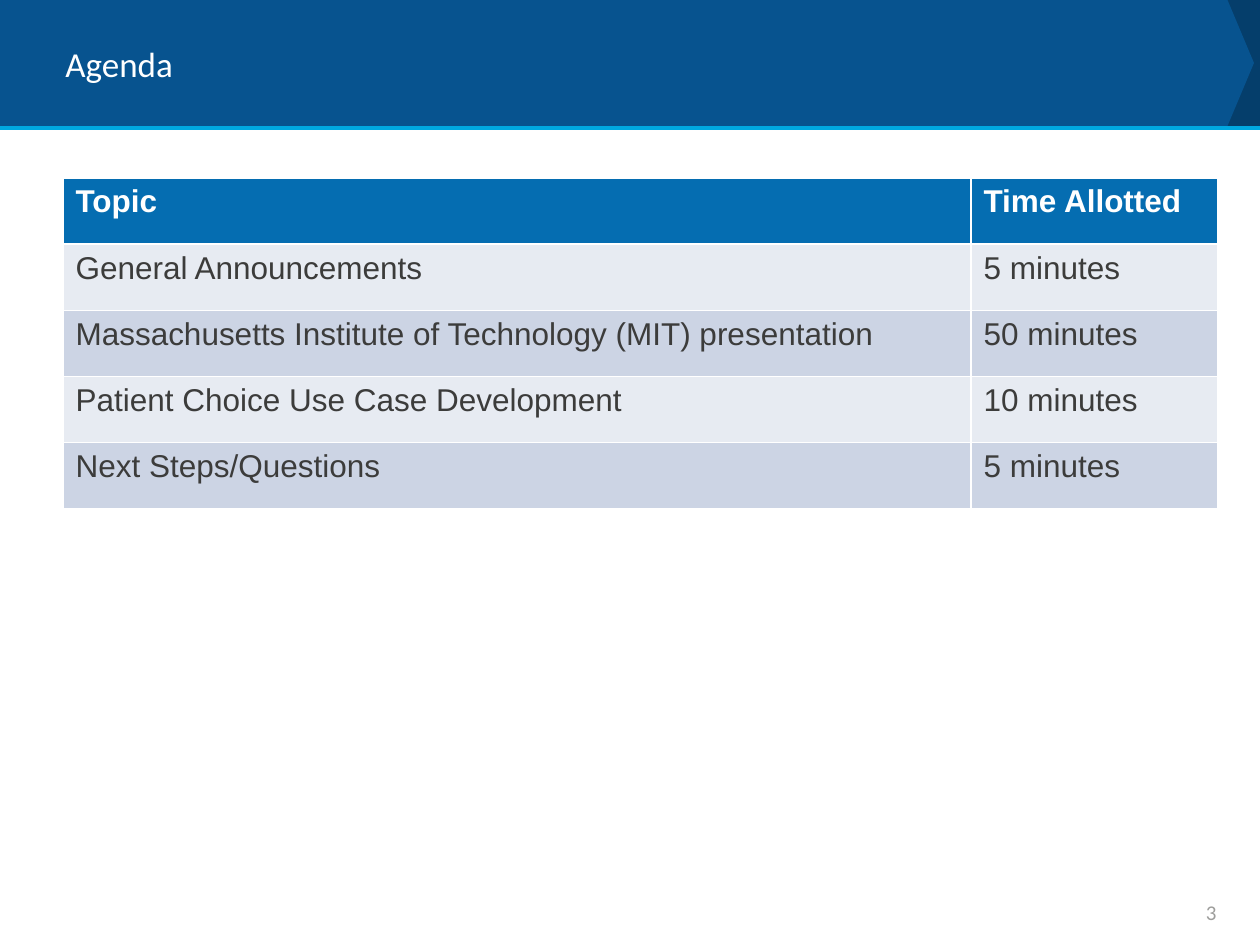
from dataclasses import dataclass

from lxml import etree
from pptx import Presentation
from pptx.dml.color import RGBColor
from pptx.enum.shapes import MSO_CONNECTOR, MSO_SHAPE
from pptx.enum.text import MSO_ANCHOR, PP_ALIGN
from pptx.oxml.ns import qn
from pptx.util import Pt

PLATE = MSO_SHAPE.PENTAGON
LINE = MSO_CONNECTOR.STRAIGHT
MIDDLE = MSO_ANCHOR.MIDDLE
LEFT, RIGHT = PP_ALIGN.LEFT, PP_ALIGN.RIGHT
SCALE = 914400 / 126


@dataclass(frozen=True)
class Theme:
    """Colours, fonts and type sizes of the slide."""
    navy: str = "053E6B"
    blue: str = "07538F"
    sky: str = "00A8E1"
    head: str = "056DB1"
    bands: tuple = ("E7EBF2", "CCD4E4")
    white: str = "FFFFFF"
    ink: str = "3C3C3B"
    gray: str = "9E9E9C"
    sans: str = "Calibri"
    body: str = "Arial"
    title: int = 20
    cell: int = 18
    page: int = 12


THEME = Theme()
AGENDA = [
    ("Topic", "Time Allotted"),
    ("General Announcements", "5 minutes"),
    ("Massachusetts Institute of Technology (MIT) presentation", "50 minutes"),
    ("Patient Choice Use Case Development", "10 minutes"),
    ("Next Steps/Questions", "5 minutes"),
]


def px(*sizes):
    """Turn pixel lengths into EMU."""
    return [round(size * SCALE) for size in sizes]


def color(code):
    """Give the colour for a hex code."""
    return RGBColor.from_string(code)


def style(para, name, size, code, bold=False):
    """Set the font of a paragraph."""
    font = para.font
    font.name, font.size, font.bold = name, Pt(size), bold
    font.color.rgb = color(code)


def label(slide, box, text, size, code, align=LEFT):
    """Place one line of text, centred vertically in its box."""
    frame = slide.shapes.add_textbox(*px(*box)).text_frame
    frame.word_wrap = True
    frame.vertical_anchor = MIDDLE
    para = frame.paragraphs[0]
    para.text, para.alignment = text, align
    style(para, THEME.sans, size, code)


def plate(slide, box, code, point):
    """Place a plain plate with a pointed right end."""
    shape = slide.shapes.add_shape(PLATE, *px(*box))
    shape.adjustments[0] = point
    shape.shadow.inherit = False
    shape.fill.solid()
    shape.fill.fore_color.rgb = color(code)
    shape.line.fill.background()


def banner(slide, box, text):
    """Draw the title band with its arrow end and rule."""
    left, top, width, height = box
    tail = 57
    plate(slide, (left + width - tail, top, tail, height), THEME.navy, 0)
    plate(slide, (left, top, width - 6, height), THEME.blue, 0.21)
    rule = top + height + 2
    line = slide.shapes.add_connector(LINE, *px(left, rule, left + width, rule))
    line.line.color.rgb = color(THEME.sky)
    line.line.width = Pt(2.25)
    etree.SubElement(line._element.spPr, qn("a:effectLst"))
    label(slide, (left + 53, top + 10, 1155, 107), text, THEME.title, THEME.white)


def border(cell):
    """Give a cell thin white borders."""
    props = cell._tc.get_or_add_tcPr()
    for place, side in enumerate(("lnL", "lnR", "lnT", "lnB")):
        edge = etree.Element(qn(f"a:{side}"), w=str(Pt(1)))
        fill = etree.SubElement(edge, qn("a:solidFill"))
        etree.SubElement(fill, qn("a:srgbClr"), val=THEME.white)
        props.insert(place, edge)


def agenda(slide, box, rows):
    """Draw the agenda table with banded rows."""
    left, top, width, height = box
    split = 908
    table = slide.shapes.add_table(len(rows), len(rows[0]), *px(*box)).table
    for col, size in zip(table.columns, px(split, width - split)):
        col.width = size
    for num, row in enumerate(rows):
        table.rows[num].height = px(height / len(rows))[0]
        first = num == 0
        band = THEME.head if first else THEME.bands[(num - 1) % 2]
        ink = THEME.white if first else THEME.ink
        for cell, text in zip(table.rows[num].cells, row):
            cell.text = text
            cell.fill.solid()
            cell.fill.fore_color.rgb = color(band)
            style(cell.text_frame.paragraphs[0], THEME.body, THEME.cell, ink, first)
            border(cell)


def main():
    """Build the agenda slide and save it."""
    deck = Presentation()
    deck.slide_width, deck.slide_height = px(1260, 945)
    slide = deck.slides.add_slide(deck.slide_layouts[6])
    banner(slide, (0, 0, 1260, 126), "Agenda")
    label(slide, (935, 896, 294, 32), "3", THEME.page, THEME.gray, RIGHT)
    agenda(slide, (63, 178, 1155, 331), AGENDA)
    deck.save("out.pptx")


if __name__ == "__main__":
    main()
